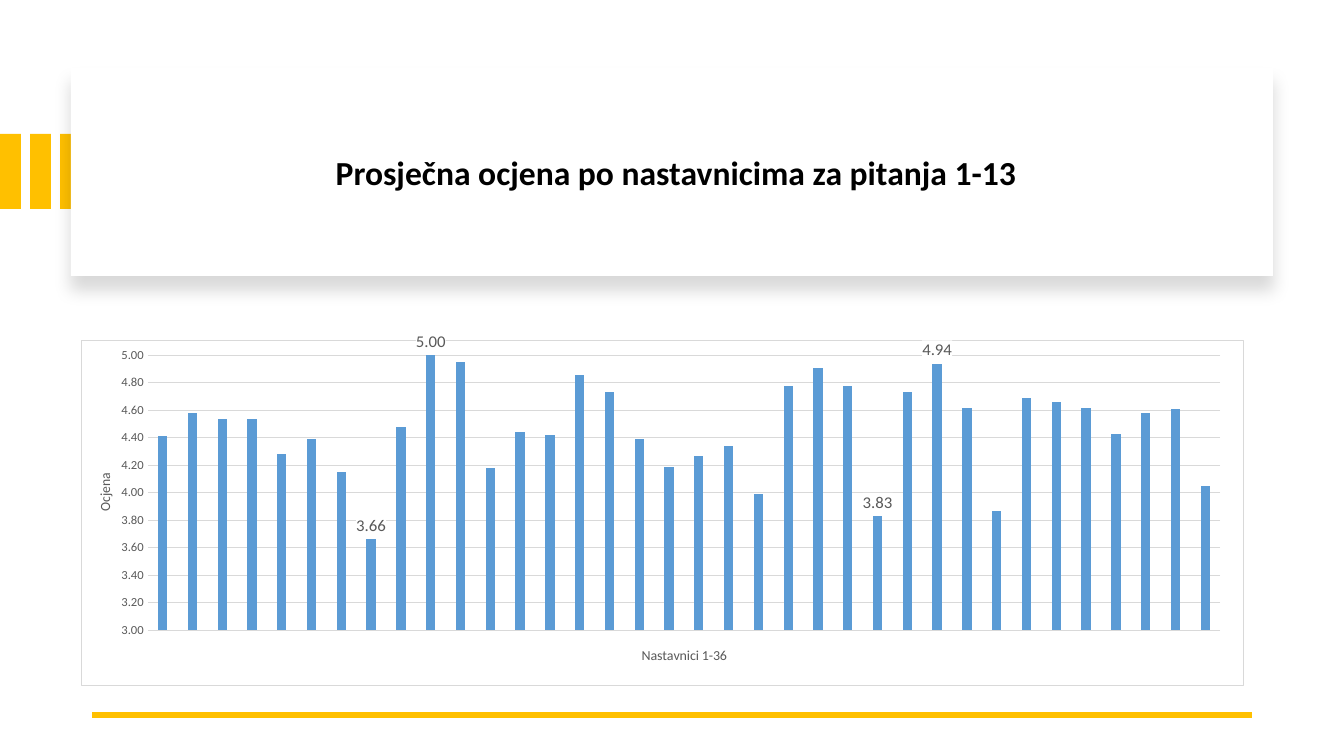
from dataclasses import dataclass

from lxml import etree
from pptx import Presentation
from pptx.chart.data import CategoryChartData
from pptx.dml.color import RGBColor
from pptx.enum.chart import XL_CHART_TYPE, XL_LABEL_POSITION, XL_TICK_LABEL_POSITION, XL_TICK_MARK
from pptx.enum.shapes import MSO_CONNECTOR, MSO_SHAPE
from pptx.enum.text import MSO_ANCHOR, PP_ALIGN
from pptx.oxml import parse_xml
from pptx.oxml.ns import nsdecls, qn
from pptx.util import Emu, Pt

COLUMNS = XL_CHART_TYPE.COLUMN_CLUSTERED
ABOVE = XL_LABEL_POSITION.OUTSIDE_END
NO_LABELS = XL_TICK_LABEL_POSITION.NONE
NO_TICKS = XL_TICK_MARK.NONE
RECTANGLE = MSO_SHAPE.RECTANGLE
STRAIGHT = MSO_CONNECTOR.STRAIGHT
MIDDLE = MSO_ANCHOR.MIDDLE
CENTER = PP_ALIGN.CENTER

EMU_PER_PX = 914400 / 100.8

RATINGS = [
    4.41, 4.58, 4.54, 4.54, 4.28, 4.39, 4.15, 3.66, 4.48, 5.00, 4.95, 4.18,
    4.44, 4.42, 4.86, 4.73, 4.39, 4.19, 4.27, 4.34, 3.99, 4.78, 4.91, 4.78,
    3.83, 4.73, 4.94, 4.62, 3.87, 4.69, 4.66, 4.62, 4.43, 4.58, 4.61, 4.05,
]
LABELLED_TEACHERS = (8, 10, 25, 27)


@dataclass(frozen=True)
class Theme:
    font: str = "Calibri"
    accent: str = "FFC000"
    card: str = "FFFFFF"
    ink: str = "000000"
    muted: str = "595959"
    rule: str = "D9D9D9"
    column: str = "5B9BD5"
    title_size: int = 24
    label_size: int = 12
    chart_size: int = 10
    axis_title_size: int = 10
    tick_size: int = 9


def px(length):
    return Emu(round(length * EMU_PER_PX))


def manual_layout(x, y, width=None, height=None):
    """Place a chart part by fractions of the chart area."""
    parts = {"xMode": "edge", "yMode": "edge", "x": x, "y": y}
    if width is not None:
        parts = {"layoutTarget": "inner", **parts, "w": width, "h": height}
    layout = etree.Element(qn("c:layout"))
    manual = etree.SubElement(layout, qn("c:manualLayout"))
    for name, value in parts.items():
        etree.SubElement(manual, qn(f"c:{name}")).set("val", str(value))
    return layout


def replace_layout(parent, layout, index):
    for old in parent.findall(qn("c:layout")):
        parent.remove(old)
    parent.insert(index, layout)


class SlideBuilder:
    def __init__(self, page, theme):
        self.page = page
        self.theme = theme

    def style(self, font, size, color, bold=False):
        font.name = self.theme.font
        font.size = Pt(size)
        font.bold = bold
        font.color.rgb = RGBColor.from_string(color)

    def stroke(self, line, color, width=0.75):
        line.color.rgb = RGBColor.from_string(color)
        line.width = Pt(width)

    def title(self, text, left, top, width, height):
        box = self.page.shapes.title
        box.left, box.top, box.width, box.height = map(px, (left, top, width, height))
        frame = box.text_frame
        frame.text = text
        frame.word_wrap = True
        frame.vertical_anchor = MIDDLE
        para = frame.paragraphs[0]
        para.alignment = CENTER
        para.line_spacing = 0.9
        self.style(para.runs[0].font, self.theme.title_size, self.theme.ink, bold=True)
        # Bring the title in front of the card
        box._element.getparent().append(box._element)

    def rectangle(self, left, top, width, height, color):
        box = self.page.shapes.add_shape(RECTANGLE, *map(px, (left, top, width, height)))
        box.shadow.inherit = False
        box.fill.solid()
        box.fill.fore_color.rgb = RGBColor.from_string(color)
        box.line.fill.background()
        return box

    def card(self, left, top, width, height):
        box = self.rectangle(left, top, width, height, self.theme.card)
        effects = box._element.spPr.find(qn("a:effectLst"))
        effects.append(parse_xml(
            f'<a:outerShdw {nsdecls("a")} blurRad="{Pt(11)}" dist="{Pt(10)}" dir="5400000"'
            f' algn="t" rotWithShape="0"><a:srgbClr val="{self.theme.ink}">'
            '<a:alpha val="15000"/></a:srgbClr></a:outerShdw>'))

    def line(self, x1, y1, x2, y2, width):
        line = self.page.shapes.add_connector(STRAIGHT, *map(px, (x1, y1, x2, y2)))
        self.stroke(line.line, self.theme.accent, width)
        etree.SubElement(line._element.spPr, qn("a:effectLst"))

    def axis_title(self, axis, text, x, y, rotation=0):
        title = axis.axis_title
        frame = title.text_frame
        frame.text = text
        span = frame.paragraphs[0].runs[0]
        self.style(span.font, self.theme.axis_title_size, self.theme.muted)
        body = title._element.find(".//" + qn("a:bodyPr"))
        body.set("rot", str(rotation * 60000))
        body.set("vert", "horz")
        replace_layout(title._element, manual_layout(x, y), 1)

    def point_label(self, point):
        label = point.data_label
        self.style(label.font, self.theme.label_size, self.theme.muted)
        label.position = ABOVE
        text_style = label._dLbl.find(qn("c:txPr"))
        text_style.addprevious(parse_xml(
            f'<c:spPr {nsdecls("c", "a")}><a:solidFill><a:srgbClr val="{self.theme.card}"/>'
            '</a:solidFill><a:ln><a:noFill/></a:ln></c:spPr>'))

    def column_chart(self, values, labelled, left, top, width, height):
        theme = self.theme
        data = CategoryChartData(number_format="0.00")
        data.categories = [str(number) for number in range(1, len(values) + 1)]
        data.add_series("Series 1", values)
        frame = self.page.shapes.add_chart(COLUMNS, *map(px, (left, top, width, height)), data)
        chart = frame.chart
        chart.has_legend = False
        chart.has_title = False
        self.style(chart.font, theme.chart_size, theme.ink)

        # Chart frame and plot area
        space = chart._chartSpace
        space.find(qn("c:txPr")).addprevious(parse_xml(
            f'<c:spPr {nsdecls("c", "a")}><a:noFill/><a:ln w="{Pt(0.75)}"><a:solidFill>'
            f'<a:srgbClr val="{theme.rule}"/></a:solidFill></a:ln></c:spPr>'))
        plot_area = space.find(".//" + qn("c:plotArea"))
        replace_layout(plot_area, manual_layout(0.057, 0.043, 0.923, 0.797), 0)

        # Columns and the highlighted values
        plot = chart.plots[0]
        plot.gap_width = 219
        plot.overlap = -27
        plot.vary_by_categories = False
        series = plot.series[0]
        series.format.fill.solid()
        series.format.fill.fore_color.rgb = RGBColor.from_string(theme.column)
        series.data_labels.show_value = False
        for number in labelled:
            self.point_label(series.points[number - 1])

        # Axes, with the rating title left of its tick labels
        teachers, rating = chart.category_axis, chart.value_axis
        for axis in (teachers, rating):
            axis.major_tick_mark = axis.minor_tick_mark = NO_TICKS
            self.style(axis.tick_labels.font, theme.tick_size, theme.muted)
        teachers.tick_label_position = NO_LABELS
        self.stroke(teachers.format.line, theme.rule)
        self.axis_title(teachers, "Nastavnici 1-36", 0.48, 0.88)
        rating.minimum_scale, rating.maximum_scale = 3, 5
        rating.major_unit = 0.2
        rating.tick_labels.number_format = "0.00"
        rating.tick_labels.number_format_is_linked = False
        rating.format.line.fill.background()
        self.stroke(rating.major_gridlines.format.line, theme.rule)
        self.axis_title(rating, "Ocjena", 0.01, 0.38, rotation=-90)


def main():
    deck = Presentation()
    deck.slide_width, deck.slide_height = px(1344), px(756)
    page = deck.slides.add_slide(deck.slide_layouts[5])
    theme = Theme()
    builder = SlideBuilder(page, theme)

    # Heading with its accent bars
    for index in range(3):
        builder.rectangle(index * 30, 134, 21, 75, theme.accent)
    builder.card(71, 68, 1202, 208)
    builder.title("Prosječna ocjena po nastavnicima za pitanja 1-13", 115, 89, 1122, 171)

    # Ratings above the closing rule
    builder.line(1252, 715, 92, 715, 4.5)
    builder.column_chart(RATINGS, LABELLED_TEACHERS, 81, 332, 1163, 354)

    deck.save("out.pptx")


if __name__ == "__main__":
    main()
